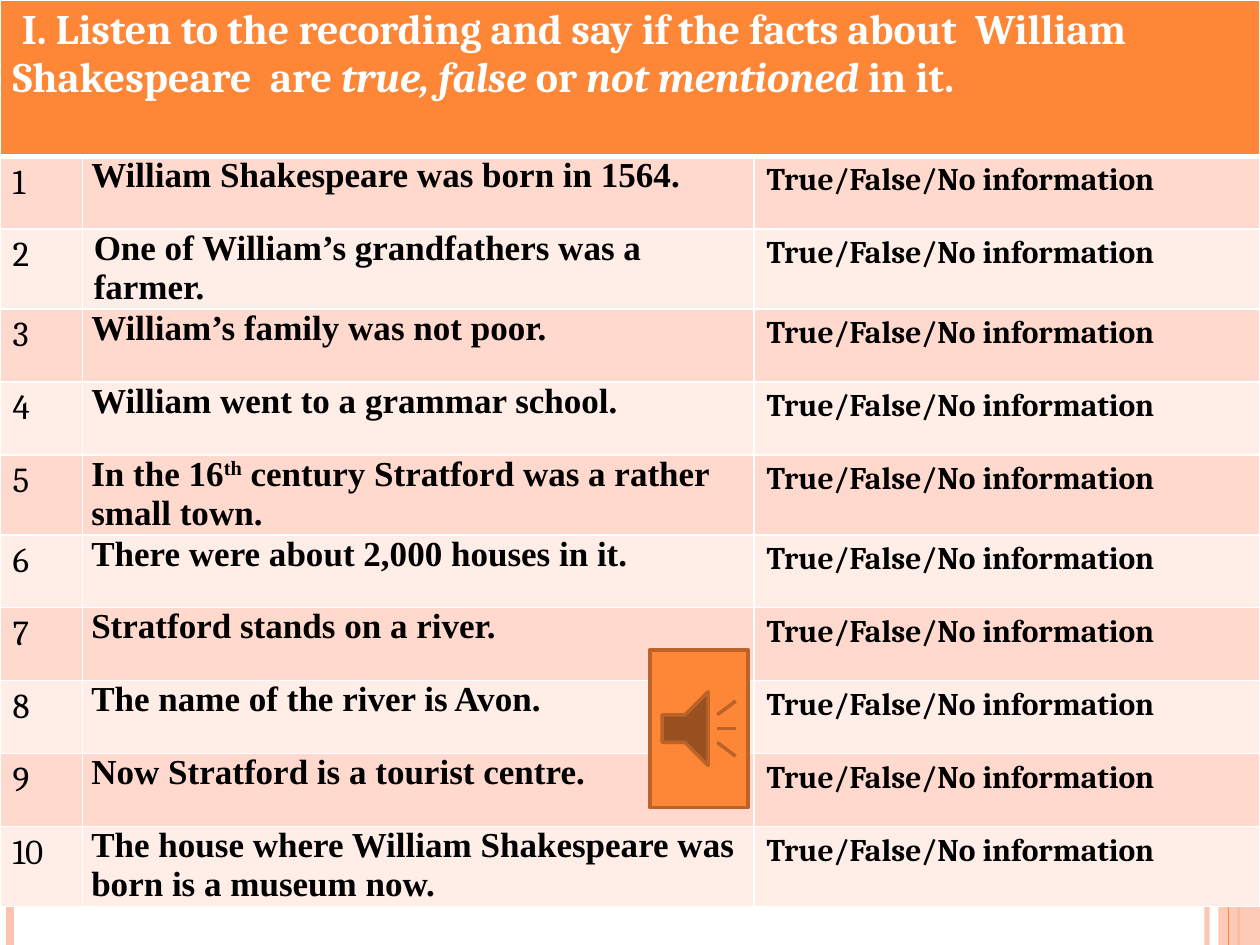
from lxml import etree
from pptx import Presentation
from pptx.dml.color import RGBColor
from pptx.enum.shapes import MSO_CONNECTOR, MSO_SHAPE
from pptx.oxml.ns import qn
from pptx.util import Cm, Pt

STRAIGHT = MSO_CONNECTOR.STRAIGHT
RECTANGLE = MSO_SHAPE.RECTANGLE
SOUND_BUTTON = MSO_SHAPE.ACTION_BUTTON_SOUND

WIDTH, HEIGHT = 25.4, 19.05
COLUMNS = [1.66, 13.54, 10.2]
HEADER_HEIGHT, SHORT_ROW, TALL_ROW = 3.15, 1.47, 1.61

HEADING = [
    (" I. Listen to the recording and say if the facts about  William Shakespeare  are ", ""),
    ("true, false", "italic"),
    (" or ", ""),
    ("not mentioned ", "italic"),
    ("in it.", ""),
]
# Each fact: runs, row height, left margin and first-line indent
HANGING, FLUSH = (1.27, -1.27), (0, 0)
FACTS = [
    ([("William Shakespeare was born in 1564.", "")], SHORT_ROW, HANGING),
    ([("One of William’s grandfathers was a farmer.", "")], TALL_ROW, (0.05, 0)),
    ([("William’s family was not poor.", "")], SHORT_ROW, HANGING),
    ([("William went to a grammar school.", "")], SHORT_ROW, HANGING),
    ([("In the 16", ""), ("th", "superscript"),
      (" century Stratford was a rather small town.", "")], TALL_ROW, FLUSH),
    ([("There were about 2,000 houses in it.", "")], SHORT_ROW, HANGING),
    ([("Stratford stands on a river.", "")], SHORT_ROW, HANGING),
    ([("The name of the river is Avon.", "")], SHORT_ROW, HANGING),
    ([("Now Stratford is a tourist centre.", "")], SHORT_ROW, HANGING),
    ([("The house where William Shakespeare was born is a museum now.", "")],
     TALL_ROW, FLUSH),
]
CHOICES = [("True/False/No information", "")]


def color(value):
    return RGBColor.from_string(value)


class SlideBuilder:
    accent, pale, outline = "FE8637", "FEC3AE", "BC6329"
    bands = ("FFD9CE", "FFEDE8")
    white, black = "FFFFFF", "000000"
    main_font, fact_font = "Cambria", "Times New Roman"

    def __init__(self, page):
        self.page = page

    def set_alpha(self, element, percent):
        fill_color = next(element.iter(qn("a:srgbClr")))
        etree.SubElement(fill_color, qn("a:alpha"), val=str(percent * 1000))

    def stripe(self, x, line_color, width, alpha=100):
        line = self.page.shapes.add_connector(STRAIGHT, Cm(x), 0, Cm(x), Cm(HEIGHT))
        line.line.color.rgb = color(line_color)
        line.line.width = Pt(width)
        properties = line._element.spPr
        etree.SubElement(properties, qn("a:effectLst"))
        if alpha < 100:
            self.set_alpha(properties, alpha)

    def shape(self, kind, left, top, width, height, fill, line=None, alpha=100):
        shape = self.page.shapes.add_shape(kind, Cm(left), Cm(top), Cm(width), Cm(height))
        shape.shadow.inherit = False
        shape.fill.solid()
        shape.fill.fore_color.rgb = color(fill)
        if alpha < 100:
            self.set_alpha(shape._element.spPr, alpha)
        if line:
            shape.line.color.rgb = color(line)
            shape.line.width = Pt(2)
        else:
            shape.line.fill.background()

    def table(self, columns, rows):
        frame = self.page.shapes.add_table(
            len(rows), len(columns), 0, 0, Cm(sum(columns)), Cm(sum(rows)))
        table = frame.table
        for column, width in zip(table.columns, columns):
            column.width = Cm(width)
        for row, height in zip(table.rows, rows):
            row.height = Cm(height)
        return table

    def style_cell(self, cell, fill, top=1, bottom=1):
        properties = cell._tc.get_or_add_tcPr()
        for side, width in (("L", 1), ("R", 1), ("T", top), ("B", bottom)):
            border = etree.SubElement(properties, qn("a:ln" + side), w=str(Pt(width)))
            paint = etree.SubElement(border, qn("a:solidFill"))
            etree.SubElement(paint, qn("a:srgbClr"), val=self.white)
        cell.fill.solid()
        cell.fill.fore_color.rgb = color(fill)

    def cell_text(self, cell, runs, font, size, text_color, bold=True, indent=FLUSH):
        para = cell.text_frame.paragraphs[0]
        if indent != FLUSH:
            properties = para._p.get_or_add_pPr()
            properties.set("marL", str(Cm(indent[0])))
            properties.set("indent", str(Cm(indent[1])))
        for text, style in runs:
            span = para.add_run()
            span.text = text
            span.font.name = font
            span.font.size = Pt(size)
            span.font.bold = bold
            span.font.italic = style == "italic"
            span.font.color.rgb = color(text_color)
            if style == "superscript":
                span._r.get_or_add_rPr().set("baseline", "30000")

    def quiz(self):
        table = self.table(COLUMNS, [HEADER_HEIGHT] + [height for _, height, _ in FACTS])
        # Heading across all columns
        table.cell(0, 0).merge(table.cell(0, len(COLUMNS) - 1))
        for cell in table.rows[0].cells:
            self.style_cell(cell, self.accent, bottom=3)
        self.cell_text(table.cell(0, 0), HEADING, self.main_font, 24, self.white)
        # Numbered facts
        for number, (runs, _, indent) in enumerate(FACTS, 1):
            label, fact, choice = table.rows[number].cells
            for cell in (label, fact, choice):
                self.style_cell(cell, self.bands[(number - 1) % 2], top=3 if number == 1 else 1)
            self.cell_text(label, [(str(number), "")], self.main_font, 20, self.black, bold=False)
            fact.margin_left = fact.margin_right = Cm(0.18)
            fact.margin_top = fact.margin_bottom = 0
            self.cell_text(fact, runs, self.fact_font, 20, self.black, indent=indent)
            self.cell_text(choice, CHOICES, self.main_font, 18, self.black)


def main():
    deck = Presentation()
    deck.slide_width, deck.slide_height = Cm(WIDTH), Cm(HEIGHT)
    builder = SlideBuilder(deck.slides.add_slide(deck.slide_layouts[6]))

    # Edge stripes
    builder.stripe(24.33, builder.pale, 3, alpha=93)
    builder.stripe(0.2, builder.pale, 4.5)
    builder.stripe(24.97, builder.accent, 1.5)
    builder.shape(RECTANGLE, 24.56, 0, 0.84, HEIGHT, builder.pale, alpha=87)
    builder.stripe(24.77, builder.accent, 0.75)

    # Quiz table and sound button
    builder.quiz()
    builder.shape(SOUND_BUTTON, 13.1, 13.1, 1.98, 3.18, builder.accent, builder.outline)

    deck.save("out.pptx")


if __name__ == "__main__":
    main()
